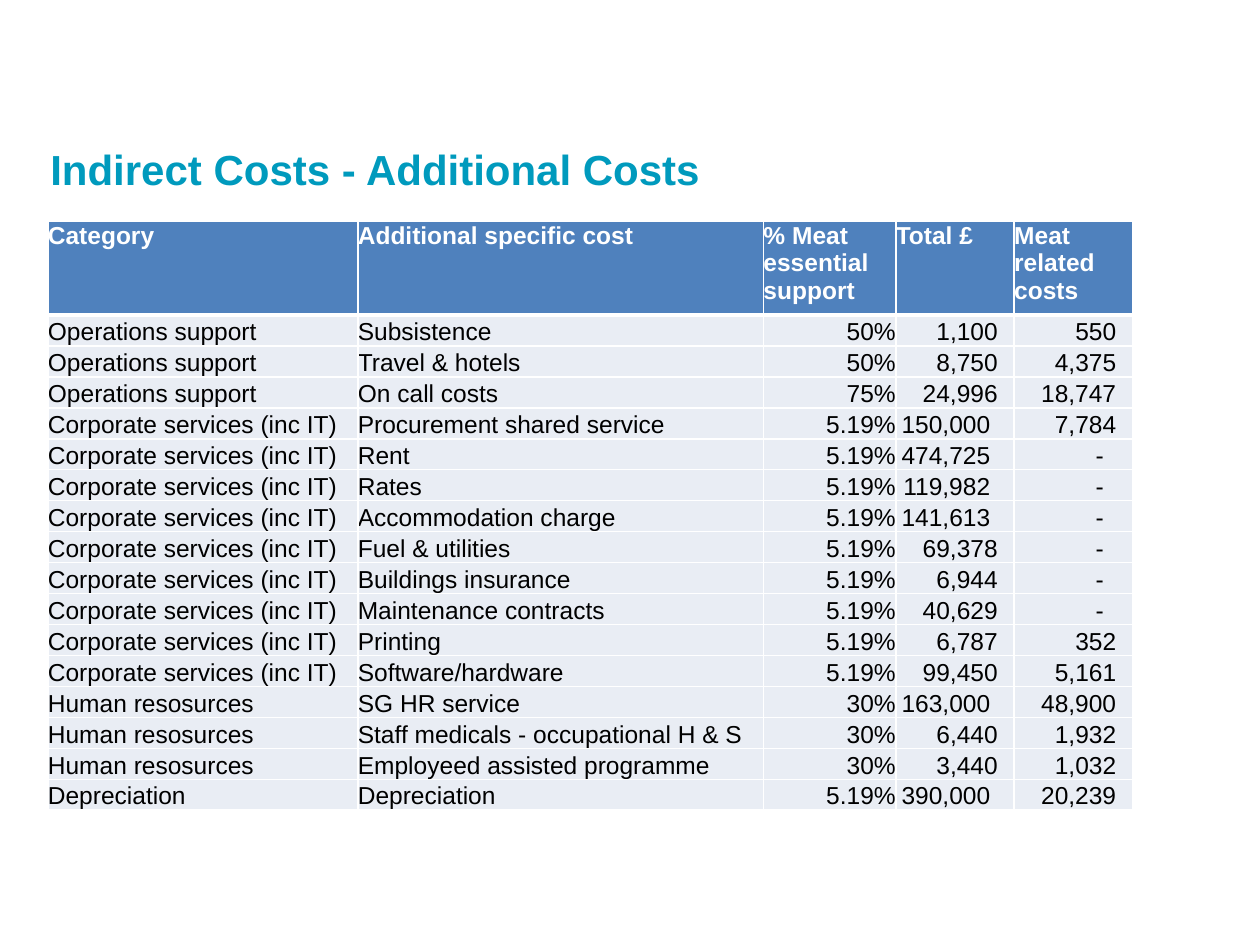
"""Build the slide listing the additional indirect costs in a table."""
from lxml import etree
from pptx import Presentation
from pptx.dml.color import RGBColor
from pptx.enum.text import MSO_ANCHOR, PP_ALIGN
from pptx.oxml.ns import qn
from pptx.util import Inches, Pt

TOP, BOTTOM = MSO_ANCHOR.TOP, MSO_ANCHOR.BOTTOM
LEFT, RIGHT = PP_ALIGN.LEFT, PP_ALIGN.RIGHT
IT = "Corporate services (inc IT)"
OPS = "Operations support"
HR = "Human resosurces"

HEADERS = ["Category", "Additional specific cost", "% Meat essential support",
           "Total £", "Meat related costs"]
COSTS = [
    (OPS, "Subsistence", "50%", "1,100", "550"),
    (OPS, "Travel & hotels", "50%", "8,750", "4,375"),
    (OPS, "On call costs", "75%", "24,996", "18,747"),
    (IT, "Procurement shared service", "5.19%", "150,000", "7,784"),
    (IT, "Rent", "5.19%", "474,725", "-"),
    (IT, "Rates", "5.19%", "119,982", "-"),
    (IT, "Accommodation charge", "5.19%", "141,613", "-"),
    (IT, "Fuel & utilities", "5.19%", "69,378", "-"),
    (IT, "Buildings insurance", "5.19%", "6,944", "-"),
    (IT, "Maintenance contracts", "5.19%", "40,629", "-"),
    (IT, "Printing", "5.19%", "6,787", "352"),
    (IT, "Software/hardware", "5.19%", "99,450", "5,161"),
    (HR, "SG HR service", "30%", "163,000", "48,900"),
    (HR, "Staff medicals - occupational H & S", "30%", "6,440", "1,932"),
    (HR, "Employeed assisted programme", "30%", "3,440", "1,032"),
    ("Depreciation", "Depreciation", "5.19%", "390,000", "20,239"),
]
COL_WIDTHS = [2.46, 3.22, 1.05, 0.94, 0.94]


def rgb(color):
    return RGBColor.from_string(color)


def add_run(p, text, size, color, bold):
    r = p.add_run()
    r.text = text
    r.font.name = "Arial"
    r.font.size = Pt(size)
    r.font.bold = bold
    r.font.color.rgb = rgb(color)


prs = Presentation()
prs.slide_width, prs.slide_height = Inches(10), Inches(7.5)
s = prs.slides.add_slide(prs.slide_layouts[6])

sp = s.shapes.add_textbox(Inches(0.32), Inches(1.05), Inches(6.96), Inches(0.74))
tf = sp.text_frame
tf.word_wrap = True
tf.margin_left, tf.margin_top = Inches(0.08), Inches(0.09)
add_run(tf.paragraphs[0], "Indirect Costs - Additional Costs", 24, "009ABD", True)

rows = [HEADERS] + COSTS
table = s.shapes.add_table(len(rows), len(HEADERS), Inches(0.38), Inches(1.76),
                           Inches(sum(COL_WIDTHS)), Inches(4.68)).table
table.horz_banding = False
for col, width in zip(table.columns, COL_WIDTHS):
    col.width = Inches(width)

for i, values in enumerate(rows):
    header = i == 0
    table.rows[i].height = Inches(0.74 if header else 0.246)
    for j, text in enumerate(values):
        cell = table.cell(i, j)
        cell.margin_left = cell.margin_top = cell.margin_bottom = 0
        cell.margin_right = 0
        if not header and j > 2:
            indent = 0.23 if text == "-" else 0.19 if len(text) == 7 else 0.13
            cell.margin_right = Inches(indent)
        cell.vertical_anchor = TOP if header else BOTTOM
        cell.fill.solid()
        cell.fill.fore_color.rgb = rgb("4F81BD" if header else "E9EDF4")
        p = cell.text_frame.paragraphs[0]
        p.alignment = LEFT if header or j < 2 else RIGHT
        add_run(p, text, 14, "FFFFFF" if header else "000000", header)

        tc_pr = cell._tc.get_or_add_tcPr()
        for k, side in enumerate(["lnL", "lnR", "lnT", "lnB"]):
            thick = (header and side == "lnB") or (i == 1 and side == "lnT")
            ln = etree.Element(qn(f"a:{side}"), w=str(Pt(3 if thick else 1)))
            fill = etree.SubElement(ln, qn("a:solidFill"))
            etree.SubElement(fill, qn("a:srgbClr"), val="FFFFFF")
            tc_pr.insert(k, ln)

prs.save("out.pptx")
